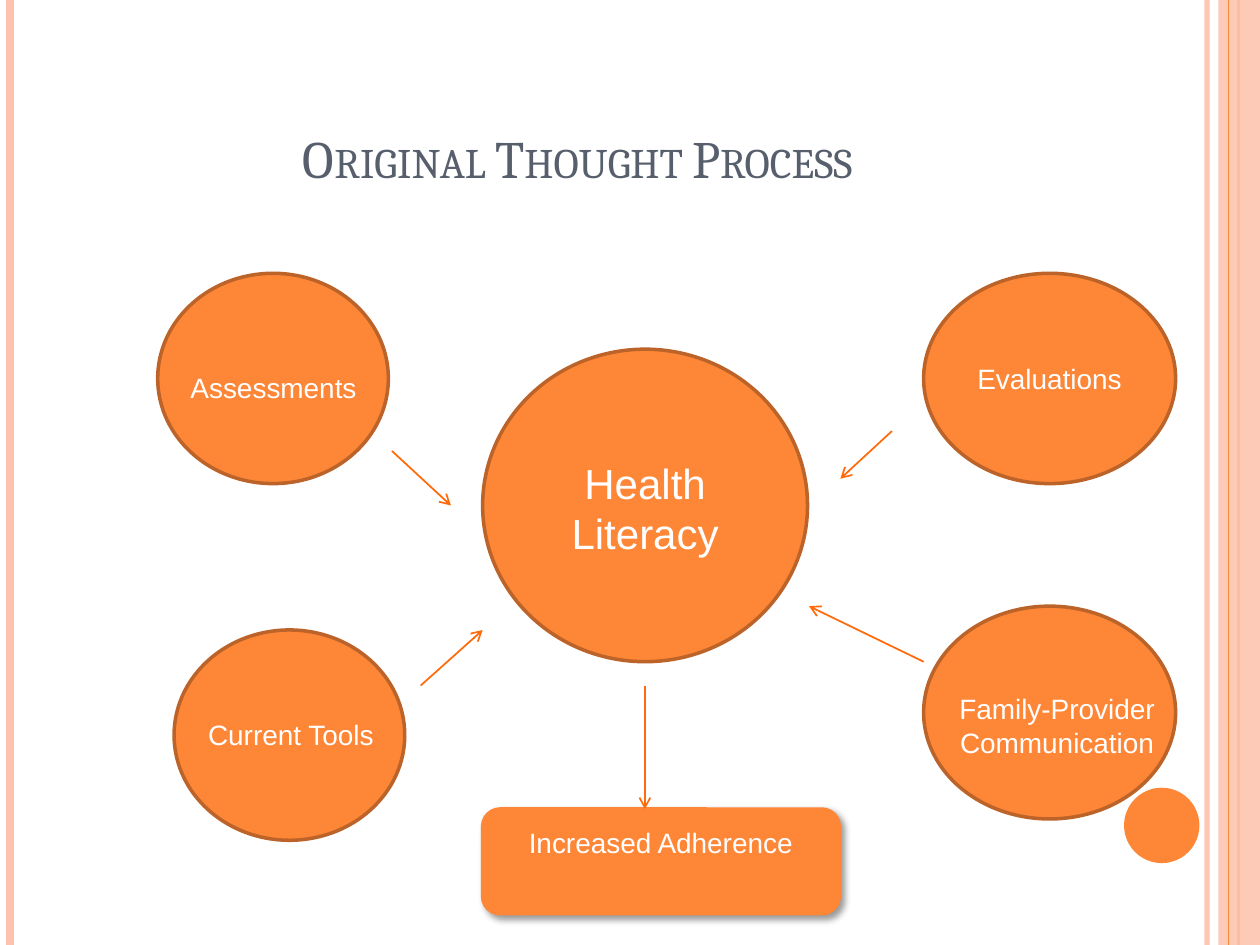
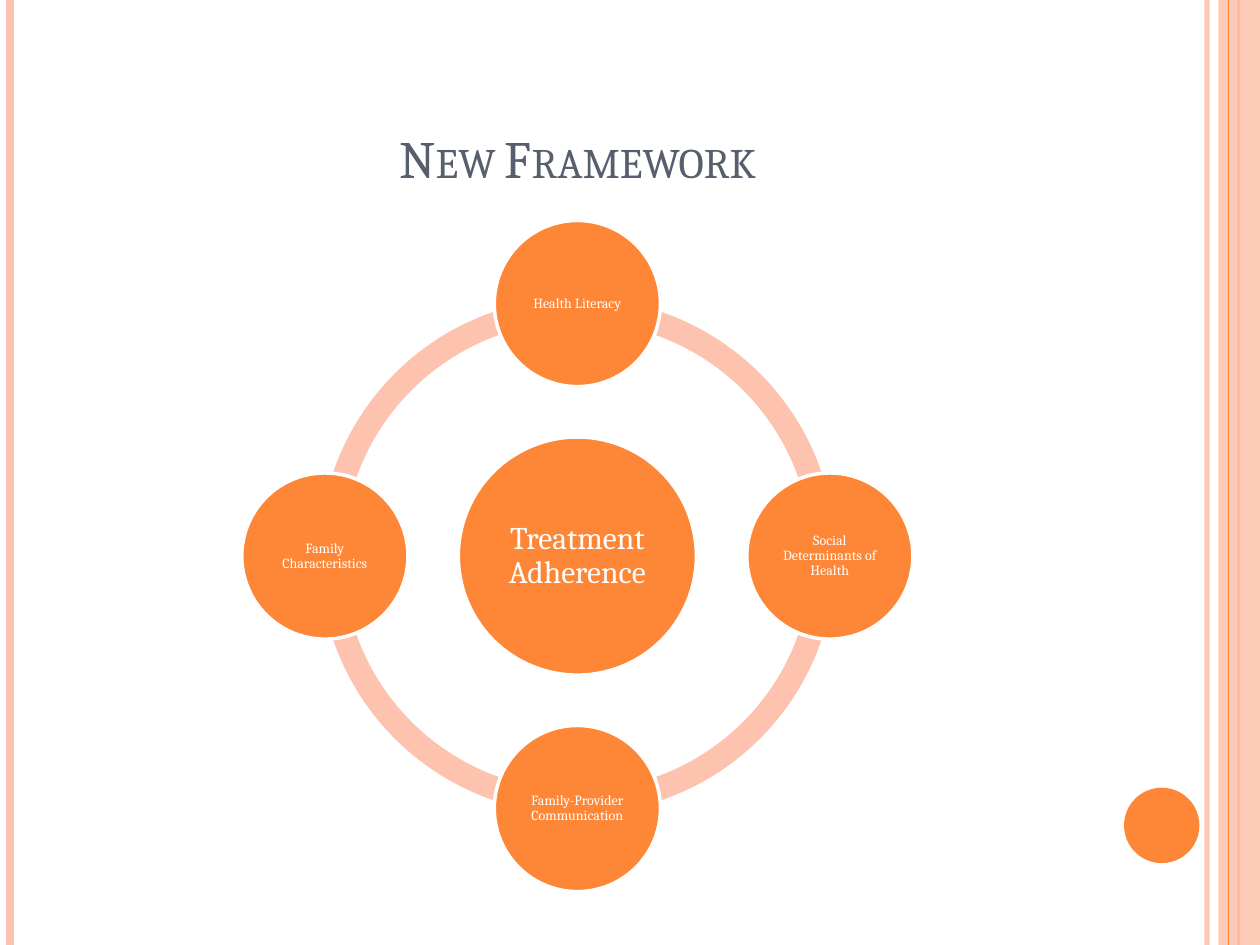
from math import cos, radians, sin

from lxml import etree
from pptx import Presentation
from pptx.dml.color import RGBColor
from pptx.enum.shapes import MSO_CONNECTOR as CONN, MSO_SHAPE as SHAPE
from pptx.enum.text import MSO_ANCHOR as ANCHOR, PP_ALIGN as ALIGN
from pptx.oxml.ns import qn
from pptx.util import Cm, Pt

COLORS = {
    "orange": "FE8637",
    "brown": "BC6329",
    "arrow": "FF6B0A",
    "peach": "FEC3AE",
    "slate": "575F6D",
    "white": "FFFFFF",
    "black": "000000",
}
WIDTH, HEIGHT = 25.4, 19.05
HEADING_FONT, BODY_FONT = "Cambria", "Arial"


def rgb(name):
    return RGBColor.from_string(COLORS[name])


def set_alpha(fill, percent):
    """Make a solid fill partly transparent."""
    color = fill._xPr.find(qn("a:solidFill"))[0]
    etree.SubElement(color, qn("a:alpha")).set("val", str(percent * 1000))


def add_shape(slide, kind, box, fill, line=None):
    sp = slide.shapes.add_shape(kind, *map(Cm, box))
    sp.shadow.inherit = False
    sp.fill.solid()
    sp.fill.fore_color.rgb = rgb(fill)
    if line:
        sp.line.color.rgb = rgb(line)
        sp.line.width = Pt(2)
    else:
        sp.line.fill.background()
    return sp


def write(sp, text, size, font=BODY_FONT, color="white", anchor=ANCHOR.MIDDLE,
          inset=None, spacing=None):
    """Put centred text in a shape; inset is one margin in cm for all sides."""
    tf = sp.text_frame
    tf.text = text
    tf.word_wrap = True
    tf.vertical_anchor = anchor
    if inset is not None:
        tf.margin_left = tf.margin_right = Cm(inset)
        tf.margin_top = tf.margin_bottom = Cm(inset)
    for p in tf.paragraphs:
        p.alignment = ALIGN.CENTER
        if spacing:
            p.line_spacing = spacing
        for r in p.runs:
            r.font.name = font
            r.font.size = Pt(size)
            r.font.color.rgb = rgb(color)


def add_label(slide, text, box, size=16):
    tb = slide.shapes.add_textbox(*map(Cm, box))
    write(tb, text, size, anchor=ANCHOR.TOP)


def add_line(slide, ends, color, width):
    line = slide.shapes.add_connector(CONN.STRAIGHT, *map(Cm, ends))
    line.line.color.rgb = rgb(color)
    line.line.width = Pt(width)
    etree.SubElement(line._element.spPr, qn("a:effectLst"))
    return line


def add_arrow(slide, ends):
    ln = add_line(slide, ends, "arrow", 1).line._get_or_add_ln()
    etree.SubElement(ln, qn("a:tailEnd")).set("type", "arrow")


def add_drop_shadow(sp):
    effects = sp._element.spPr.find(qn("a:effectLst"))
    shadow = etree.SubElement(effects, qn("a:outerShdw"), blurRad=str(Pt(4)),
                              dist=str(Pt(3)), dir=str(45 * 60000),
                              algn="tl", rotWithShape="0")
    color = etree.SubElement(shadow, qn("a:srgbClr"), val=COLORS["black"])
    etree.SubElement(color, qn("a:alpha"), val="40000")


def add_vertical(slide, x, color, width):
    return add_line(slide, (x, 0, x, HEIGHT), color, width)


def add_base_slide(prs, title):
    """Add a slide with the side bands, the corner dot and the title."""
    slide = prs.slides.add_slide(prs.slide_layouts[6])
    set_alpha(add_vertical(slide, 24.33, "peach", 3).line.fill, 93)
    add_vertical(slide, 0.21, "peach", 4.5)
    add_vertical(slide, 24.97, "orange", 1.5)
    band = add_shape(slide, SHAPE.RECTANGLE,
                     (24.56, 0, WIDTH - 24.56, HEIGHT), "peach")
    set_alpha(band.fill, 87)
    add_vertical(slide, 24.77, "orange", 0.75)
    add_shape(slide, SHAPE.OVAL, (22.66, 15.88, 1.52, 1.52), "orange")

    tb = slide.shapes.add_textbox(*map(Cm, (1.27, 0.76, 20.75, 3.18)))
    write(tb, title, 30, HEADING_FONT, "slate", ANCHOR.BOTTOM)
    tb.text_frame.paragraphs[0].runs[0].font._element.set("cap", "small")
    return slide


def add_thought_process(prs):
    slide = add_base_slide(prs, "Original Thought Process")
    bubbles = [  # circle, text, text box (None: inside the circle), size
        ((9.73, 7.04, 6.55, 6.3), "Health Literacy", (11, 9.09, 4.01, 2.31), 24),
        ((3.18, 5.51, 4.65, 4.24), "Assessments", (3.51, 7.34, 4.01, 0.94), 16),
        ((18.62, 5.51, 5.08, 4.24), "Evaluations", None, 16),
        ((3.51, 12.7, 4.65, 4.24), "Current Tools", (3.86, 14.35, 4.01, 0.94), 16),
        ((18.62, 12.22, 5.08, 4.29), "Family-Provider\nCommunication",
         (18.62, 13.82, 5.38, 1.63), 16),
    ]
    for circle, text, text_box, size in bubbles:
        sp = add_shape(slide, SHAPE.OVAL, circle, "orange", "brown")
        if text_box:
            add_label(slide, text, text_box, size)
        else:
            write(sp, text, size)

    outcome = add_shape(slide, SHAPE.ROUNDED_RECTANGLE,
                        (9.73, 16.31, 7.19, 2.11), "orange", "orange")
    add_drop_shadow(outcome)
    caption = add_shape(slide, SHAPE.RECTANGLE, (10.36, 16.51, 5.92, 1.63), "orange")
    write(caption, "Increased Adherence", 16, anchor=ANCHOR.TOP)

    for ends in [
        (7.9, 9.09, 9.09, 10.19),
        (8.48, 13.82, 9.73, 12.7),
        (17.98, 8.69, 16.94, 9.65),
        (18.62, 13.34, 16.31, 12.22),
        (13, 13.82, 13, 16.31),
    ]:
        add_arrow(slide, ends)


def square(cx, cy, side):
    return cx - side / 2, cy - side / 2, side, side


def add_framework(prs):
    slide = add_base_slide(prs, "New Framework")
    cx, cy, orbit = 11.64, 11.21, 5.09
    quarter = 54  # 90 degrees in block arc adjustment units
    for i in range(4):
        arc = add_shape(slide, SHAPE.BLOCK_ARC, square(cx, cy, 10.41), "peach")
        arc.adjustments[0] = i * quarter
        arc.adjustments[1] = (i + 1) % 4 * quarter
        arc.adjustments[2] = 0.046

    hub = add_shape(slide, SHAPE.OVAL, square(cx, cy, 4.8), "orange", "white")
    write(hub, "Treatment Adherence", 18, HEADING_FONT, inset=0.08, spacing=0.9)

    factors = ["Health Literacy", "Social Determinants of Health",
               "Family-Provider Communication", "Family Characteristics"]
    for i, factor in enumerate(factors):
        angle = radians(90 * i - 90)
        box = square(cx + orbit * cos(angle), cy + orbit * sin(angle), 3.35)
        sp = add_shape(slide, SHAPE.OVAL, box, "orange", "white")
        write(sp, factor, 8, HEADING_FONT, inset=0.03, spacing=0.9)


def main():
    prs = Presentation()
    prs.slide_width, prs.slide_height = Cm(WIDTH), Cm(HEIGHT)
    add_thought_process(prs)
    add_framework(prs)
    prs.save("out.pptx")


if __name__ == "__main__":
    main()
